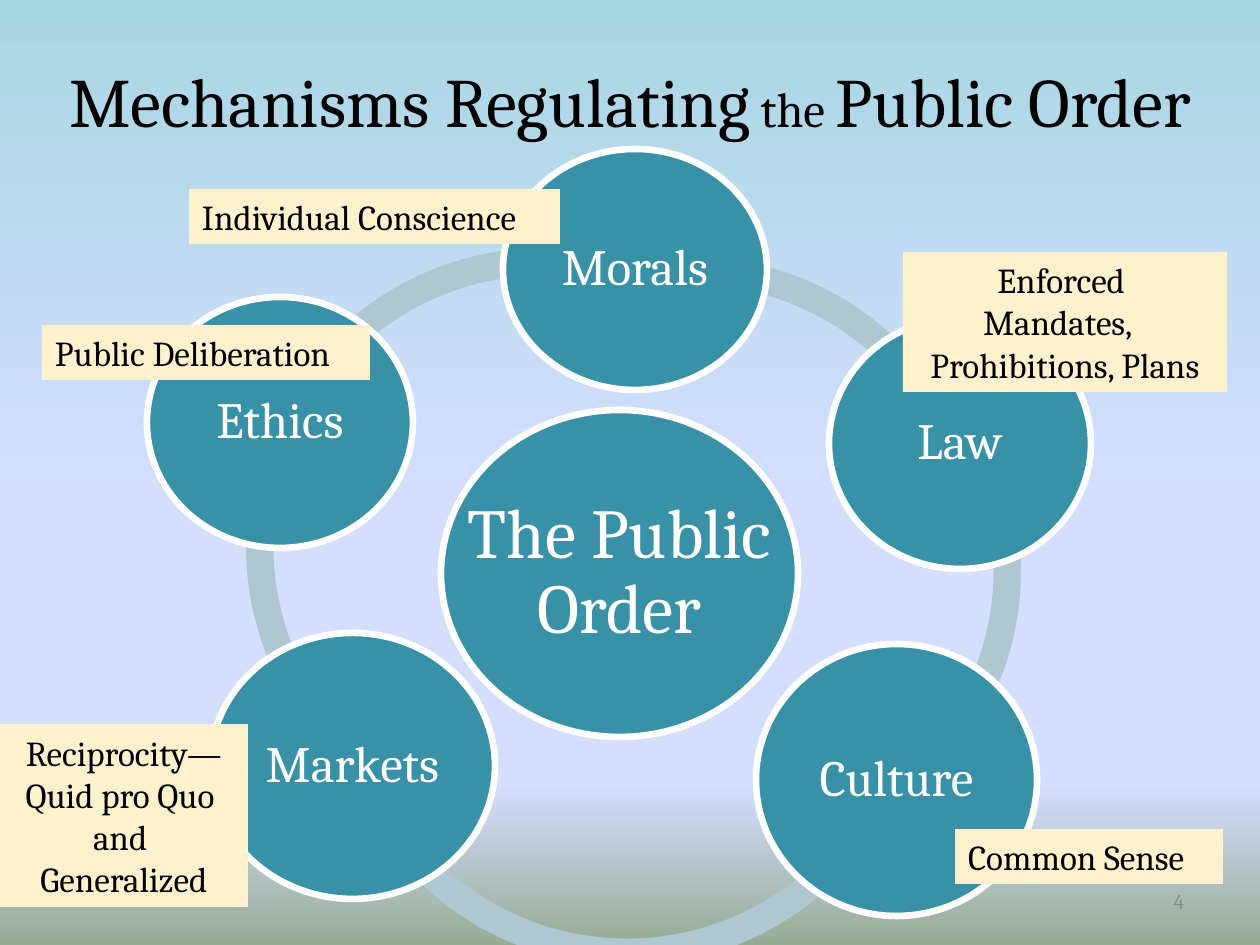
"""Build the slide on mechanisms regulating the public order."""
from pptx import Presentation
from pptx import util as u
from pptx.dml.color import RGBColor
from pptx.enum import shapes, text
from pptx.oxml import parse_xml
from pptx.oxml.ns import nsdecls

SCALE = 914400 / 126


def px(*lengths):
    return [u.Emu(round(length * SCALE)) for length in lengths]


def write(frame, lines, size, colour, align, inset=(13, 6), spacing=1.0):
    frame.text = "\n".join(lines)
    frame.word_wrap = True
    frame.vertical_anchor = text.MSO_ANCHOR.MIDDLE
    frame.margin_left = frame.margin_right = px(inset[0])[0]
    frame.margin_top = frame.margin_bottom = px(inset[1])[0]
    for paragraph in frame.paragraphs:
        paragraph.alignment = align
        paragraph.line_spacing = spacing
        for run in paragraph.runs:
            run.font.name = "Cambria"
            run.font.size = u.Pt(size)
            run.font.color.rgb = RGBColor.from_string(colour)


LEFT, CENTER, RIGHT = text.PP_ALIGN.LEFT, text.PP_ALIGN.CENTER, text.PP_ALIGN.RIGHT

prs = Presentation()
prs.slide_width, prs.slide_height = px(1260, 945)
slide = prs.slides.add_slide(prs.slide_layouts[5])

sky = [(0, "A9D7E2"), (53, "D4DEFF"), (83, "D4DEFF"), (100, "96AB94")]
stops = "".join(
    f'<a:gs pos="{pos * 1000}"><a:srgbClr val="{colour}"/></a:gs>' for pos, colour in sky
)
slide.element.cSld.insert(0, parse_xml(
    f'<p:bg {nsdecls("p", "a")}><p:bgPr><a:gradFill><a:gsLst>{stops}</a:gsLst>'
    '<a:lin ang="5400000" scaled="0"/></a:gradFill><a:effectLst/></p:bgPr></p:bg>'
))

title = slide.shapes.title
title.left, title.top, title.width, title.height = px(0, 21, 1260, 158)
write(title.text_frame, ["Mechanisms Regulating"], 39.6, "000000", CENTER)
for words, size in [(" the ", 27.9), ("Public Order", 39.6)]:
    run = title.text_frame.paragraphs[0].add_run()
    run.text = words
    run.font.name = "Cambria"
    run.font.size = u.Pt(size)
    run.font.color.rgb = RGBColor.from_string("000000")

ring_arcs = [
    (246, 248, 123.09, 172.92),
    (246, 248, 78.59, 123.08),
    (329, 370, 13.45, 96.25),
    (425, 272, 200.92, 28.09),
    (393, 257, 155.22, 202.47),
]
for left, top, start, end in ring_arcs:
    arc = slide.shapes.add_shape(shapes.MSO_SHAPE.BLOCK_ARC, *px(left, top, 596, 596))
    arc.shadow.inherit = False
    arc.fill.solid()
    arc.fill.fore_color.rgb = RGBColor.from_string("AFC7D0")
    arc.line.fill.background()
    for index, value in enumerate((start, end, 0.046)):
        arc.adjustments[index] = value

mechanisms = [
    ("The Public Order", 40, 441, 410, 357, 327),
    ("Morals", 29, 503, 149, 264, 241),
    ("Law", 29, 829, 318, 262, 251),
    ("Culture", 29, 756, 644, 281, 272),
    ("Markets", 29, 210, 633, 285, 266),
    ("Ethics", 29, 147, 297, 266, 251),
]
for name, size, *box in mechanisms:
    circle = slide.shapes.add_shape(shapes.MSO_SHAPE.OVAL, *px(*box))
    circle.shadow.inherit = False
    circle.fill.solid()
    circle.fill.fore_color.rgb = RGBColor.from_string("3891A7")
    circle.line.color.rgb = RGBColor.from_string("FFFFFF")
    circle.line.width = u.Pt(3.78)
    label = slide.shapes.add_textbox(*px(*box))
    write(label.text_frame, [name], size, "FFFFFF", CENTER, (6, 6), 0.9)

number = slide.shapes.add_textbox(*px(903, 876, 294, 50))
write(number.text_frame, ["4"], 12, "8C8C8C", RIGHT)

sources = [
    (["Individual Conscience"], LEFT, 189, 189, 371, 55),
    (["Public Deliberation"], LEFT, 42, 325, 328, 55),
    (["Reciprocity—", "Quid pro Quo ", "and ", "Generalized"], CENTER, 0, 724, 248, 183),
    (["Enforced ", "Mandates,  ", "Prohibitions, Plans"], CENTER, 903, 252, 324, 140),
    (["Common Sense"], LEFT, 955, 829, 268, 55),
]
for lines, align, *box in sources:
    note = slide.shapes.add_textbox(*px(*box))
    note.fill.solid()
    note.fill.fore_color.rgb = RGBColor.from_string("FFF1CE")
    write(note.text_frame, lines, 20, "000000", align)

prs.save("out.pptx")
